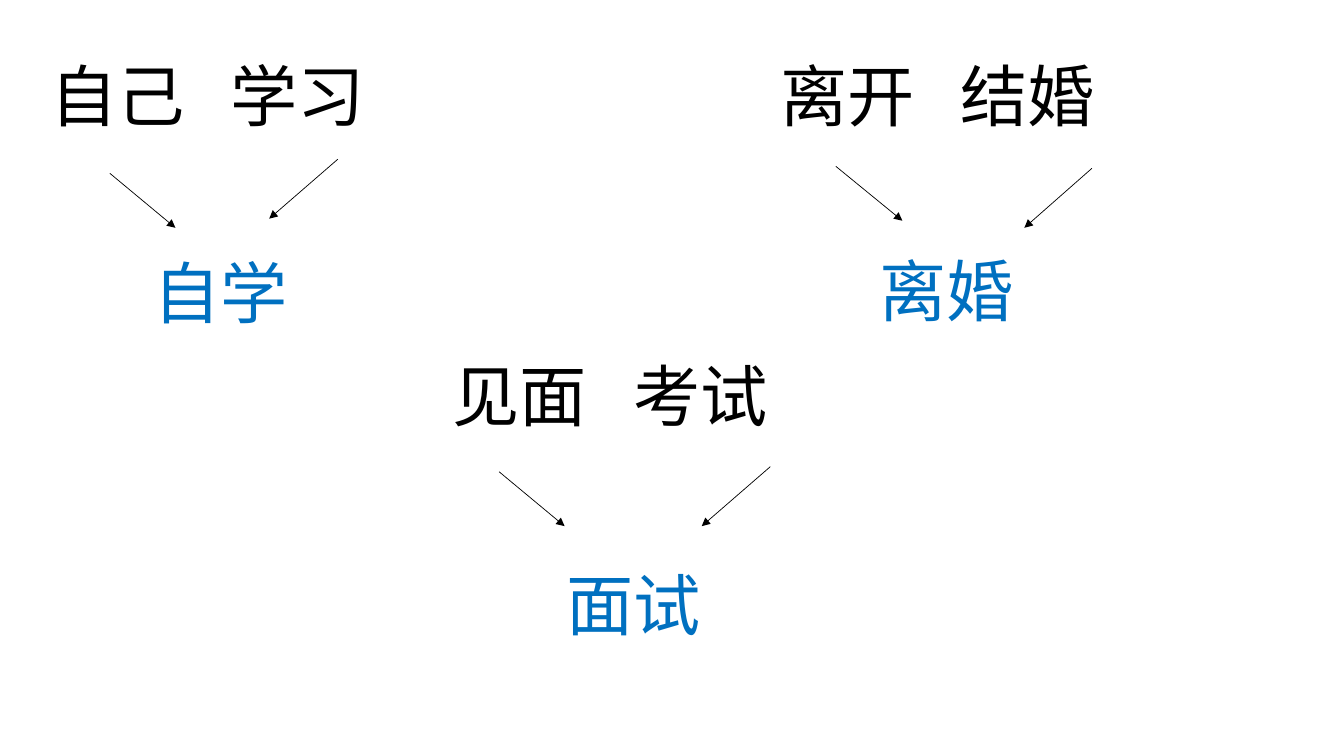
from dataclasses import dataclass

from lxml import etree
from pptx import Presentation
from pptx.dml.color import RGBColor
from pptx.enum.shapes import MSO_CONNECTOR
from pptx.enum.text import MSO_AUTO_SIZE
from pptx.oxml.ns import qn
from pptx.slide import Slide
from pptx.util import Emu, Pt

STRAIGHT = MSO_CONNECTOR.STRAIGHT
GROW = MSO_AUTO_SIZE.SHAPE_TO_FIT_TEXT

PX = 9144  # EMU per px, 100 px to the inch
PAGE_WIDTH, PAGE_HEIGHT = 1333, 750
FONT = "Noto Sans CJK SC"
COLORS = {"source": "000000", "result": "0070C0", "arrow": "000000"}

PAIR_WIDTH, RESULT_WIDTH, BOX_HEIGHT = 456, 193, 91
SECOND_WORD = 179  # tab position of the second word

Point = tuple[int, int]


@dataclass
class Blend:
    """Two words that merge into a shorter one."""
    words: tuple[str, str]
    pair_at: Point
    result: str
    result_at: Point
    arrows: tuple[tuple[Point, Point], tuple[Point, Point]]


BLENDS = [
    Blend(("自己", "学习"), (40, 49), "自学", (142, 244),
          (((109, 172), (174, 226)), ((335, 158), (267, 217)))),
    Blend(("见面", "考试"), (439, 347), "面试", (552, 554),
          (((495, 468), (560, 522)), ((764, 463), (696, 522)))),
    Blend(("离开", "结婚"), (764, 49), "离婚", (862, 242),
          (((829, 165), (895, 219)), ((1083, 167), (1016, 226)))),
]


def px(length: int) -> Emu:
    return Emu(length * PX)


def add_text(page: Slide, text: str, *, at: Point, width: int, color: str,
             size: int = 48, tab: int | None = None) -> None:
    box = page.shapes.add_textbox(px(at[0]), px(at[1]), px(width), px(BOX_HEIGHT))
    frame = box.text_frame
    frame.word_wrap = True
    frame.auto_size = GROW
    para = frame.paragraphs[0]
    span = para.add_run()
    span.text = text
    span.font.size = Pt(size)
    span.font.name = FONT
    span.font.color.rgb = RGBColor.from_string(COLORS[color])
    # East Asian glyphs take their own font setting
    etree.SubElement(span.font._element, qn("a:ea"), typeface=FONT)
    if tab is not None:
        stops = etree.SubElement(para._p.get_or_add_pPr(), qn("a:tabLst"))
        etree.SubElement(stops, qn("a:tab"), pos=str(px(tab)), algn="l")


def add_arrow(page: Slide, start: Point, end: Point) -> None:
    arrow = page.shapes.add_connector(STRAIGHT, *map(px, start + end))
    arrow.line.width = Pt(0.5)
    arrow.line.color.rgb = RGBColor.from_string(COLORS["arrow"])
    etree.SubElement(arrow.line._get_or_add_ln(), qn("a:tailEnd"), type="triangle")
    etree.SubElement(arrow._element.spPr, qn("a:effectLst"))


def add_blend(page: Slide, blend: Blend) -> None:
    add_text(page, "\t".join(blend.words), at=blend.pair_at, width=PAIR_WIDTH,
             color="source", tab=SECOND_WORD)
    for start, end in blend.arrows:
        add_arrow(page, start, end)
    add_text(page, blend.result, at=blend.result_at, width=RESULT_WIDTH,
             color="result")


def main() -> None:
    deck = Presentation()
    deck.slide_width, deck.slide_height = px(PAGE_WIDTH), px(PAGE_HEIGHT)
    page = deck.slides.add_slide(deck.slide_layouts.get_by_name("Blank"))
    for blend in BLENDS:
        add_blend(page, blend)
    deck.save("out.pptx")


if __name__ == "__main__":
    main()
